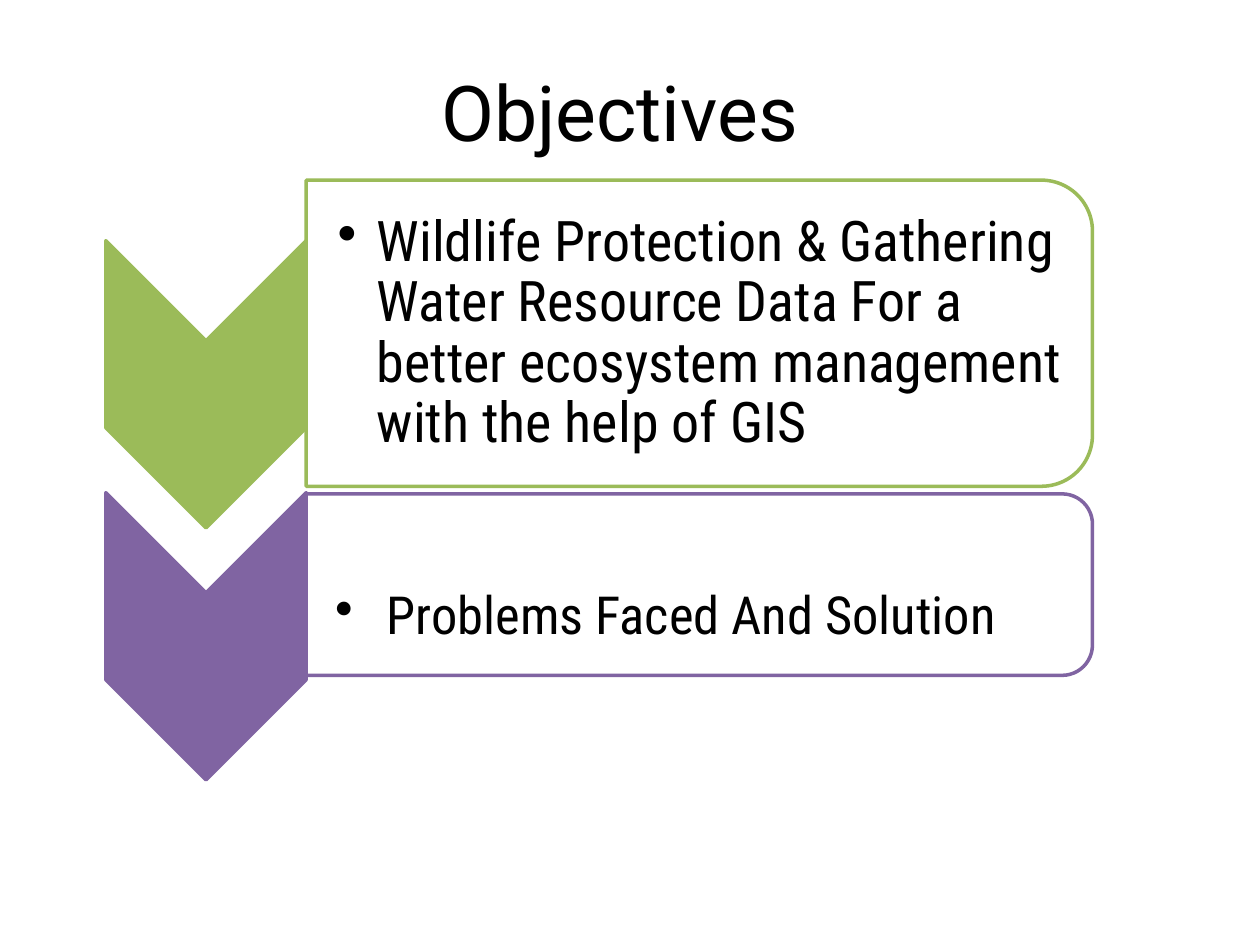
from lxml.etree import SubElement
from pptx import Presentation
from pptx.dml.color import RGBColor
from pptx.enum.shapes import MSO_SHAPE as Shape
from pptx.enum.text import MSO_ANCHOR as Anchor, PP_ALIGN as Align
from pptx.oxml.ns import qn
from pptx.util import Inches, Pt

COLORS = {"green": "9BBB59", "purple": "8064A2", "white": "FFFFFF", "black": "000000"}


def write_text(frame, text, *, font, size, color, align=Align.LEFT, line_spacing=1.0, hanging=None):
    """Fill the first paragraph; a hanging indent in inches makes it a bullet."""
    paragraph = frame.paragraphs[0]
    paragraph.alignment = align
    paragraph.line_spacing = line_spacing
    run = paragraph.add_run()
    run.text = text
    run.font.name = font
    run.font.size = Pt(size)
    run.font.color.rgb = RGBColor.from_string(color)
    if hanging:
        properties = paragraph._p.get_or_add_pPr()
        properties.set("marL", str(Inches(hanging)))
        properties.set("indent", str(-Inches(hanging)))
        SubElement(properties, qn("a:buChar"), char="•")


class SlideBuilder:
    title_font = "Roboto"
    body_font = "Roboto Condensed"
    line_width = Pt(2)

    def __init__(self, slide):
        self.slide = slide

    def turned_shape(self, kind, left, top, width, height, fill, line, opacity=100):
        """Add a shape turned by 90 degrees that covers the given area once turned."""
        shape = self.slide.shapes.add_shape(
            kind,
            Inches(left + (width - height) / 2),
            Inches(top + (height - width) / 2),
            Inches(height),
            Inches(width),
        )
        shape.rotation = 90
        shape.shadow.inherit = False
        shape.fill.solid()
        shape.fill.fore_color.rgb = RGBColor.from_string(COLORS[fill])
        shape.line.color.rgb = RGBColor.from_string(COLORS[line])
        shape.line.width = self.line_width
        if opacity < 100:
            fill_color = shape._element.spPr.find(qn("a:solidFill"))[0]
            SubElement(fill_color, qn("a:alpha"), val=str(opacity * 1000))

    def chevron(self, top, color):
        self.turned_shape(Shape.CHEVRON, 0.84, top, 1.59, 2.28, color, color)

    def panel(self, top, height, color):
        self.turned_shape(Shape.ROUND_2_SAME_RECTANGLE, 2.43, top, 6.24, height,
                          "white", color, opacity=90)

    def text_box(self, text, left, top, width, height, insets=(0.1, 0.05, 0.1, 0.05), **text_format):
        """Add middle-anchored text; insets are left, top, right, bottom."""
        box = self.slide.shapes.add_textbox(
            Inches(left), Inches(top), Inches(width), Inches(height))
        frame = box.text_frame
        frame.word_wrap = True
        frame.vertical_anchor = Anchor.MIDDLE
        (frame.margin_left, frame.margin_top,
         frame.margin_right, frame.margin_bottom) = map(Inches, insets)
        write_text(frame, text, color=COLORS["black"], **text_format)

    def title(self, text):
        self.text_box(text, 0.42, 0.25, 9, 1.25, font=self.title_font, size=44,
                      align=Align.CENTER)

    def objective(self, text, top, width, height, size, hanging, insets):
        self.text_box(text, 2.43, top, width, height, insets, font=self.body_font,
                      size=size, line_spacing=0.9, hanging=hanging)


def main():
    presentation = Presentation()
    presentation.slide_width = Inches(10)
    presentation.slide_height = Inches(7.5)
    builder = SlideBuilder(presentation.slides.add_slide(presentation.slide_layouts[6]))

    builder.title("Objectives")

    builder.chevron(1.91, "green")
    builder.panel(1.43, 2.43, "green")
    builder.objective(
        "Wildlife Protection & Gathering Water Resource Data For a better "
        "ecosystem management with the help of GIS",
        top=1.55, width=6.12, height=2.2, size=32, hanging=0.31,
        insets=(0.25, 0.02, 0.02, 0.02))

    builder.chevron(3.91, "purple")
    builder.panel(3.92, 1.44, "purple")
    builder.objective(
        "Problems Faced And Solution",
        top=3.99, width=6.17, height=1.3, size=30, hanging=0.41,
        insets=(0.23, 0.55, 0.02, 0.02))

    presentation.save("out.pptx")


if __name__ == "__main__":
    main()
